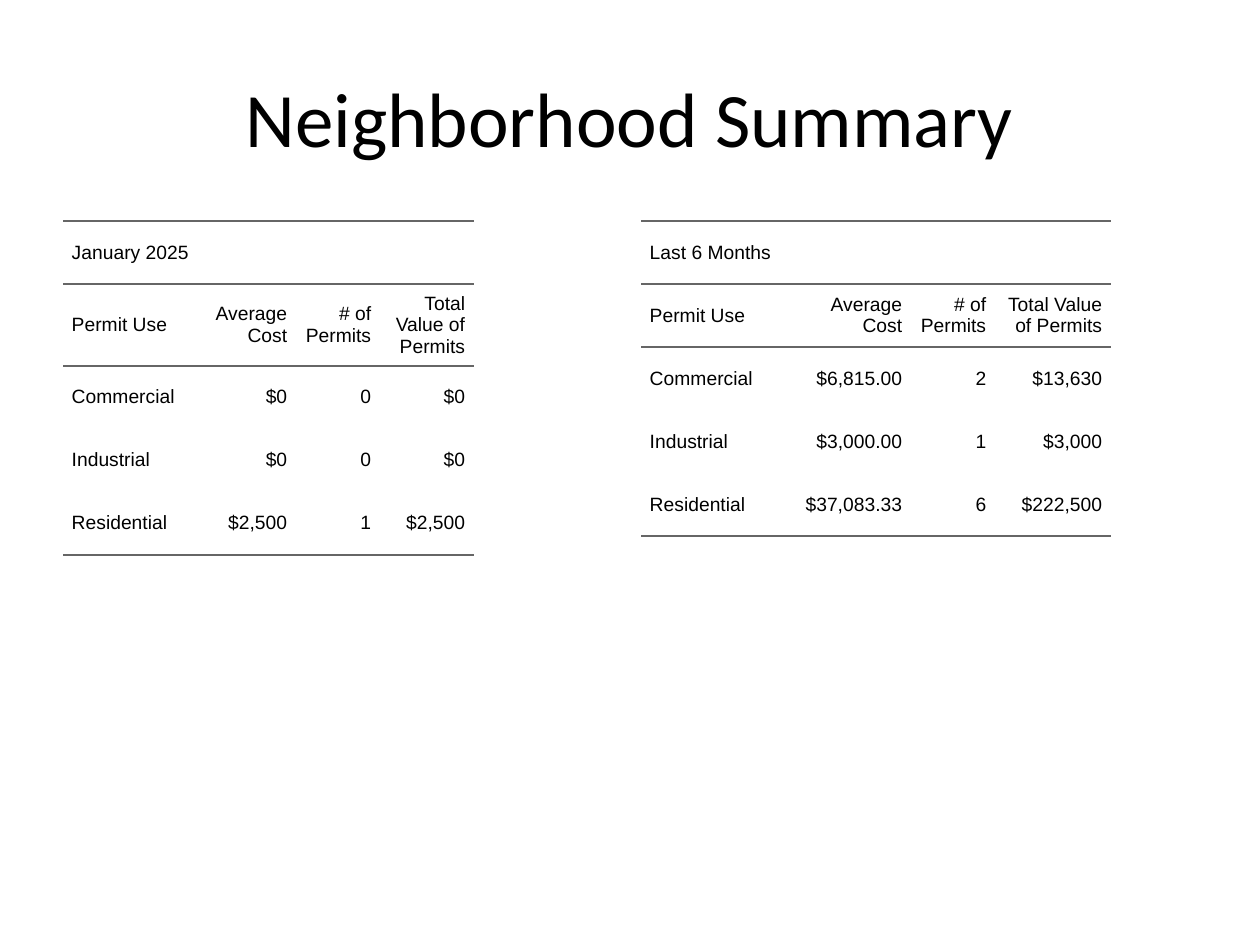
import pptx
import pptx.util
import pptx.dml.color
import pptx.enum.text
import lxml.etree

TITLE = "Neighborhood Summary"
HEADINGS = ("Permit Use", "Average Cost", "# of Permits", "Total Value of Permits")
SUMMARIES = [
    {
        "left": 63,
        "columns": (139, 94, 84, 94),
        "period": "January 2025",
        "permits": [
            ("Commercial", "$0", "0", "$0"),
            ("Industrial", "$0", "0", "$0"),
            ("Residential", "$2,500", "1", "$2,500"),
        ],
    },
    {
        "left": 641,
        "columns": (139, 131, 84, 116),
        "period": "Last 6 Months",
        "permits": [
            ("Commercial", "$6,815.00", "2", "$13,630"),
            ("Industrial", "$3,000.00", "1", "$3,000"),
            ("Residential", "$37,083.33", "6", "$222,500"),
        ],
    },
]
TOP, ROW_HEIGHT = 221, 63
MARGIN = pptx.util.Pt(5)
FRAME_SIZE = (557, 624)
RULED_EDGES = (0, 1, 2, 5)
BLACK, GRAY = "000000", "666666"
DRAWING = "http://schemas.openxmlformats.org/drawingml/2006/main"


def px(length):
    return pptx.util.Emu(round(length * 914400 / 126))


def color(value):
    return pptx.dml.color.RGBColor.from_string(value)


def write(paragraph, wording, font, size, alignment):
    paragraph.alignment = alignment
    run = paragraph.add_run()
    run.text = wording
    run.font.name = font
    run.font.size = pptx.util.Pt(size)
    run.font.color.rgb = color(BLACK)


def draw_borders(cell, row):
    properties = cell._tc.get_or_add_tcPr()
    ruled = {"lnL": False, "lnR": False,
             "lnT": row in RULED_EDGES, "lnB": row + 1 in RULED_EDGES}
    for position, (side, visible) in enumerate(ruled.items()):
        border = lxml.etree.Element(f"{{{DRAWING}}}{side}")
        if visible:
            border.set("w", str(pptx.util.Pt(1.5)))
            fill = lxml.etree.SubElement(border, f"{{{DRAWING}}}solidFill")
            lxml.etree.SubElement(fill, f"{{{DRAWING}}}srgbClr", val=GRAY)
        else:
            lxml.etree.SubElement(border, f"{{{DRAWING}}}noFill")
        properties.insert(position, border)


def fill_cell(cell, wording, row, column):
    cell.fill.background()
    cell.vertical_anchor = pptx.enum.text.MSO_ANCHOR.MIDDLE
    cell.margin_left = cell.margin_right = 0
    cell.margin_top = cell.margin_bottom = MARGIN
    draw_borders(cell, row)
    if not wording:
        return
    paragraph = cell.text_frame.paragraphs[0]
    paragraph.space_before = paragraph.space_after = pptx.util.Pt(5)
    alignment = pptx.enum.text.PP_ALIGN.RIGHT if column else pptx.enum.text.PP_ALIGN.LEFT
    write(paragraph, wording, "Arial", 11, alignment)
    indents = paragraph._p.get_or_add_pPr()
    for side in ("marL", "marR"):
        indents.set(side, str(MARGIN))
    indents.set("indent", "0")


def add_summary(slide, summary):
    lines = [(summary["period"], "", "", ""), HEADINGS, *summary["permits"]]
    widths = summary["columns"]
    frame = slide.shapes.add_table(
        len(lines), len(widths), px(summary["left"]), px(TOP),
        px(sum(widths)), px(ROW_HEIGHT * len(lines)))
    table = frame.table
    table.first_row = table.horz_banding = False
    for column, width in zip(table.columns, widths):
        column.width = px(width)
    for row, line in enumerate(lines):
        table.rows[row].height = px(ROW_HEIGHT)
        for column, wording in enumerate(line):
            fill_cell(table.cell(row, column), wording, row, column)
    table.cell(0, 0).merge(table.cell(0, len(widths) - 1))
    frame.width, frame.height = map(px, FRAME_SIZE)


def main():
    deck = pptx.Presentation()
    deck.slide_width, deck.slide_height = px(1260), px(945)
    slide = deck.slides.add_slide(deck.slide_layouts[6])
    for summary in SUMMARIES:
        add_summary(slide, summary)
    heading = slide.shapes.add_textbox(px(63), px(38), px(1134), px(157)).text_frame
    heading.word_wrap = True
    heading.vertical_anchor = pptx.enum.text.MSO_ANCHOR.MIDDLE
    write(heading.paragraphs[0], TITLE, "Calibri", 44, pptx.enum.text.PP_ALIGN.CENTER)
    deck.save("out.pptx")


if __name__ == "__main__":
    main()
